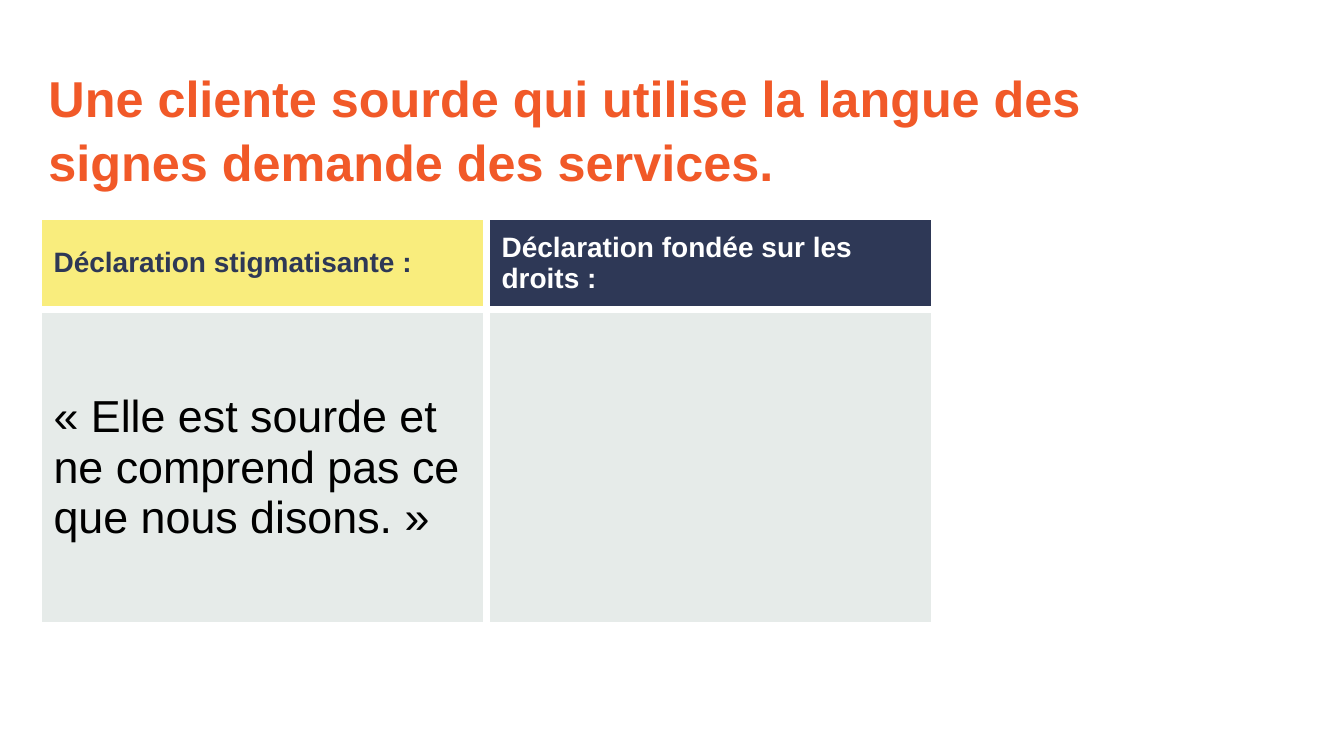
"""Build the slide comparing a stigmatising statement with a rights-based one."""
from lxml.etree import SubElement
from pptx import Presentation
from pptx.dml.color import RGBColor
from pptx.enum.text import MSO_ANCHOR as Anchor, MSO_AUTO_SIZE as AutoSize, PP_ALIGN as Align
from pptx.oxml.ns import qn
from pptx.util import Cm, Pt

NAVY, WHITE, GREY = "2E3856", "FFFFFF", "E6EBE9"


def color(value):
    return RGBColor.from_string(value)


def write(frame, text, size, text_color, bold):
    paragraph = frame.paragraphs[0]
    paragraph.alignment = Align.LEFT
    run = paragraph.add_run()
    run.text = text
    font_format = {"name": "Arial", "size": Pt(size), "bold": bold}
    for name, value in font_format.items():
        setattr(run.font, name, value)
    run.font.color.rgb = color(text_color)
    return paragraph


presentation = Presentation()
presentation.slide_width, presentation.slide_height = Cm(33.87), Cm(19.05)
slide = presentation.slides.add_slide(presentation.slide_layouts[5])

title = slide.shapes.title
title_place = {"left": 0.97, "top": 1.37, "width": 28.63, "height": 3.68}
for name, value in title_place.items():
    setattr(title, name, Cm(value))
title_format = {"word_wrap": True, "auto_size": AutoSize.NONE, "vertical_anchor": Anchor.MIDDLE}
for side in ("left", "top", "right", "bottom"):
    title_format[f"margin_{side}"] = Cm(0.25)
for name, value in title_format.items():
    setattr(title.text_frame, name, value)
heading = write(title.text_frame,
                "Une cliente sourde qui utilise la langue des signes demande des services.",
                36, "F15928", True)
heading.line_spacing = 1.07

statements = [
    [("Déclaration stigmatisante :", 20, NAVY, True, "F9ED7D"),
     ("Déclaration fondée sur les droits :", 20, WHITE, True, NAVY)],
    [("« Elle est sourde et ne comprend pas ce que nous disons. »", 32, "000000", False, GREY),
     ("", 32, "000000", False, GREY)],
]
table = slide.shapes.add_table(2, 2, Cm(0.97), Cm(5.46), Cm(22.58), Cm(10.24)).table
for column in table.columns:
    column.width = Cm(11.29)
for row, height in zip(table.rows, (2.26, 7.98)):
    row.height = Cm(height)

cell_format = {"vertical_anchor": Anchor.MIDDLE}
for side in ("left", "top", "right", "bottom"):
    cell_format[f"margin_{side}"] = Cm(0.38)
for row, row_statements in zip(table.rows, statements):
    for cell, (text, size, text_color, bold, fill) in zip(row.cells, row_statements):
        for name, value in cell_format.items():
            setattr(cell, name, value)
        if text:
            write(cell.text_frame, text, size, text_color, bold)
        properties = cell._tc.get_or_add_tcPr()
        for edge in ("a:lnL", "a:lnR", "a:lnT", "a:lnB"):
            line = SubElement(properties, qn(edge), w=str(Pt(6)))
            line_fill = SubElement(line, qn("a:solidFill"))
            SubElement(line_fill, qn("a:srgbClr"), val=WHITE)
        cell.fill.solid()
        cell.fill.fore_color.rgb = color(fill)

presentation.save("out.pptx")
